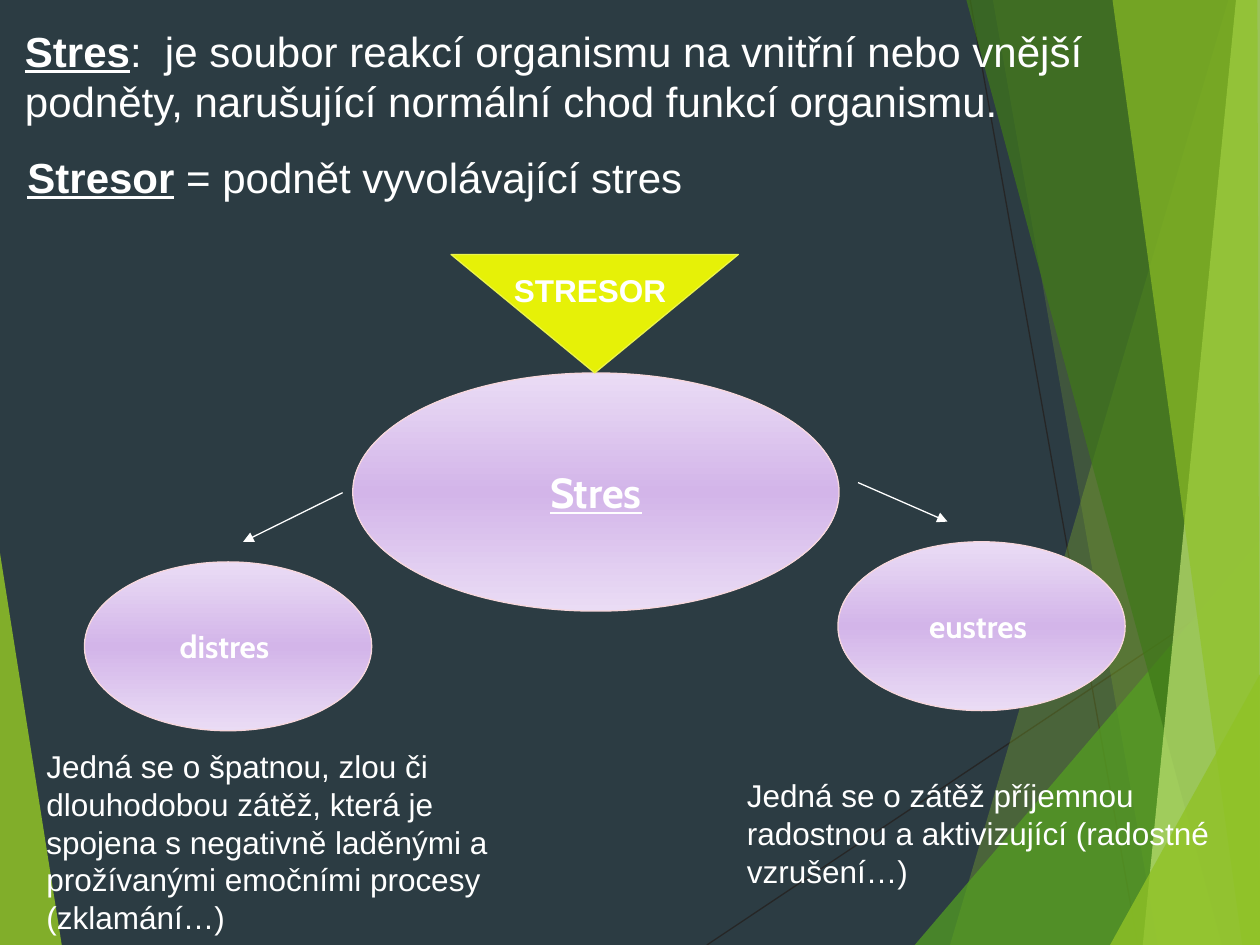
from lxml import etree
from copy import deepcopy
from pptx import Presentation
from pptx.dml.color import RGBColor
from pptx.enum.shapes import MSO_CONNECTOR as Connector, MSO_SHAPE as Shape
from pptx.enum.text import MSO_ANCHOR as Anchor, MSO_AUTO_SIZE as AutoSize, PP_ALIGN as Align
from pptx.oxml.ns import qn
from pptx.util import Inches, Pt

BACKGROUND = RGBColor(0x2C, 0x3C, 0x43)
WHITE = RGBColor(0xFF, 0xFF, 0xFF)
DARK_LINE = RGBColor(0x26, 0x26, 0x26)
LIME = RGBColor(0x90, 0xC2, 0x26)
GREEN = RGBColor(0x54, 0xA0, 0x21)
FOREST = RGBColor(0x3F, 0x78, 0x19)
PALE_LIME = RGBColor(0xC0, 0xE4, 0x74)
LILAC = RGBColor(0xD3, 0xB5, 0xE9)
PALE_LILAC = RGBColor(0xEA, 0xDC, 0xF5)
PINK = RGBColor(0xF7, 0xD7, 0xDC)
YELLOW = RGBColor(0xE6, 0xF1, 0x07)
PALE_YELLOW = RGBColor(0xEB, 0xF3, 0x4B)

# Background facets: corner points, colour, opacity in percent
FACETS = [
    ([(0, 4.39), (0.49, 7.5), (0, 7.5)], LIME, 85),
    ([(9.75, 0), (7.54, 7.5), (10, 7.5), (10, 0)], LIME, 30),
    ([(7.88, 0), (9.19, 7.5), (10, 7.5), (10, 0)], LIME, 20),
    ([(7.26, 7.5), (10, 4.29), (10, 7.5)], GREEN, 72),
    ([(7.67, 0), (9.7, 7.5), (10, 7.5), (10, 0)], FOREST, 70),
    ([(9.81, 0), (9.07, 7.5), (10, 7.5), (10, 0)], PALE_LIME, 70),
    ([(8.83, 0), (9.86, 7.5), (10, 7.5), (9.98, 0)], LIME, 65),
    ([(8.81, 7.5), (10, 5.35), (10, 7.5)], LIME, 80),
]


def add_line(slide, start, end, color, arrow=False):
    line = slide.shapes.add_connector(
        Connector.STRAIGHT, *[Inches(value) for value in (*start, *end)])
    line.line.color.rgb = color
    line.line.width = Pt(0.75)
    properties = line._element.spPr
    if arrow:
        etree.SubElement(properties.find(qn("a:ln")), qn("a:tailEnd"), type="triangle")
    etree.SubElement(properties, qn("a:effectLst"))


def add_facet(slide, points, color, opacity):
    corners = [(Inches(x), Inches(y)) for x, y in points]
    builder = slide.shapes.build_freeform(*corners[0])
    builder.add_line_segments(corners[1:], close=True)
    shape = builder.convert_to_shape()
    shape.shadow.inherit = False
    shape.fill.solid()
    shape.fill.fore_color.rgb = color
    shape.line.fill.background()
    color_element = shape._element.spPr.find(qn("a:solidFill"))[0]
    etree.SubElement(color_element, qn("a:alpha"), val=str(opacity * 1000))


def add_run(paragraph, text, size, font="Arial", bold=False, underline=False):
    run = paragraph.add_run()
    run.text = text
    run.font.name = font
    run.font.size = Pt(size)
    run.font.bold = bold
    run.font.underline = underline
    run.font.color.rgb = WHITE


def add_text(slide, box, size, text, term="", wrap=True, bold=False):
    """Add a text box, optionally opening with a bold, underlined term."""
    frame = slide.shapes.add_textbox(*[Inches(value) for value in box]).text_frame
    frame.word_wrap = wrap
    frame.auto_size = AutoSize.SHAPE_TO_FIT_TEXT
    paragraph = frame.paragraphs[0]
    if term:
        add_run(paragraph, term, size, bold=True, underline=True)
    add_run(paragraph, text, size, bold=bold)


def add_preset(slide, kind, box, line_color):
    shape = slide.shapes.add_shape(kind, *[Inches(value) for value in box])
    shape.shadow.inherit = False
    shape.line.color.rgb = line_color
    shape.line.width = Pt(0.75)
    return shape


def add_ellipse(slide, box, text, size, underline=False):
    ellipse = add_preset(slide, Shape.OVAL, box, PINK)
    # Three-stop vertical gradient, darkest in the middle
    ellipse.fill.gradient()
    ellipse.fill.gradient_angle = 90
    stop_list = ellipse._element.spPr.find(qn("a:gradFill")).find(qn("a:gsLst"))
    stop_list.append(deepcopy(stop_list[0]))
    stops = zip(ellipse.fill.gradient_stops, (0, 0.5, 1), (PALE_LILAC, LILAC, PALE_LILAC))
    for stop, position, color in stops:
        stop.position = position
        stop.color.rgb = color
    frame = ellipse.text_frame
    frame.word_wrap = False
    frame.vertical_anchor = Anchor.MIDDLE
    paragraph = frame.paragraphs[0]
    paragraph.alignment = Align.CENTER
    add_run(paragraph, text, size, "Cabin", True, underline)


def add_background(slide):
    slide.background.fill.solid()
    slide.background.fill.fore_color.rgb = BACKGROUND
    add_line(slide, (5.61, 7.5), (10, 4.57), DARK_LINE)
    add_line(slide, (7.7, 0), (9.03, 7.5), DARK_LINE)
    for points, color, opacity in FACETS:
        add_facet(slide, points, color, opacity)


def main():
    presentation = Presentation()
    presentation.slide_width = Inches(10)
    presentation.slide_height = Inches(7.5)
    slide = presentation.slides.add_slide(presentation.slide_layouts[6])
    add_background(slide)

    # Definitions
    add_text(slide, (0.1, 0.15, 9.9, 0.9), 24,
             ":  je soubor reakcí organismu na vnitřní nebo vnější podněty, "
             "narušující normální chod funkcí organismu.", term="Stres")
    add_text(slide, (0.12, 1.15, 5.4, 0.5), 24, " = podnět vyvolávající stres",
             term="Stresor", wrap=False)

    # Stress and its two kinds
    add_ellipse(slide, (2.8, 2.96, 3.86, 1.89), "Stres", 24, underline=True)
    add_ellipse(slide, (0.67, 4.46, 2.28, 1.34), "distres ", 18)
    add_ellipse(slide, (6.65, 4.3, 2.28, 1.34), "eustres ", 18)
    add_line(slide, (2.72, 3.91), (1.93, 4.3), WHITE, arrow=True)
    add_line(slide, (6.81, 3.83), (7.52, 4.14), WHITE, arrow=True)

    # Descriptions of both kinds
    add_text(slide, (0.27, 5.88, 4.17, 1.6), 18,
             "Jedná se o špatnou, zlou či dlouhodobou zátěž, která je spojena s "
             "negativně laděnými a prožívanými emočními procesy (zklamání…)")
    add_text(slide, (5.83, 6.11, 4.17, 1), 18,
             "Jedná se o zátěž příjemnou radostnou a aktivizující (radostné vzrušení…)")

    # Stressor pointing down at stress
    triangle = add_preset(slide, Shape.ISOSCELES_TRIANGLE, (3.58, 2.02, 2.28, 0.94), PALE_YELLOW)
    triangle.rotation = 180
    triangle.fill.solid()
    triangle.fill.fore_color.rgb = YELLOW
    add_text(slide, (3.98, 2.1, 1.41, 0.4), 18, "STRESOR", wrap=False, bold=True)

    presentation.save("out.pptx")


if __name__ == "__main__":
    main()
